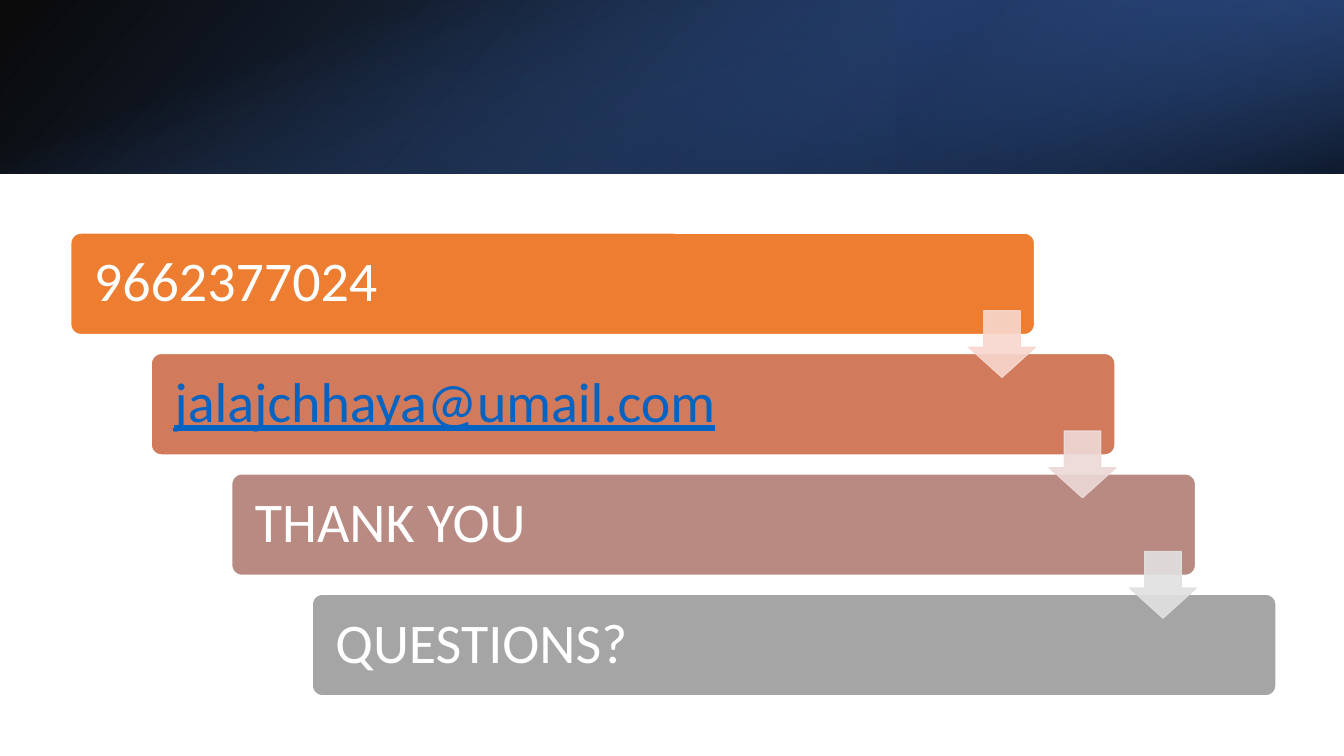
from dataclasses import dataclass

from lxml import etree
from pptx import Presentation
from pptx import util as u
from pptx.dml.color import RGBColor
from pptx.enum import shapes, text
from pptx.oxml import ns

PX = 6350  # EMU per px: 144 px to the inch
SLIDE_WIDTH, SLIDE_HEIGHT = 1920, 1080
BAND_HEIGHT = 248
STEP_X, STEP_Y = 115, 172
BOX_LEFT, BOX_TOP, BOX_WIDTH, BOX_HEIGHT = 101, 333, 1377, 145
ARROW_LEFT, ARROW_TOP, ARROW_SIZE = 1384, 444, 95
TEXT_INSET = 29

COLORS = {
    "white": "FFFFFF", "black": "000000", "link": "0563C1",
    "navy": "203864", "deep blue": "2F5597", "blue": "4472C4",
    "orange": "ED7D31", "terracotta": "D17B5C", "rose": "B98A82", "gray": "A5A5A5",
    "pale orange": "F8D7CE", "pale rose": "EDD9D7", "pale gray": "E1E1E1",
}


@dataclass
class Stop:
    percent: int
    color: str
    opacity: int = 100


@dataclass
class BandLayer:
    left: int
    top: int
    width: int
    height: int
    angle: int  # clockwise
    stops: tuple[Stop, Stop]
    rotation: int = 0
    flipped: bool = False


@dataclass
class Step:
    label: str
    fill: str
    arrow: str = ""
    is_link: bool = False


BAND_LAYERS = [
    BandLayer(0, 0, SLIDE_WIDTH, BAND_HEIGHT, 140,
              (Stop(0, "black", 96), Stop(100, "deep blue")), flipped=True),
    BandLayer(1280, 0, 640, BAND_HEIGHT, 320,
              (Stop(19, "navy", 68), Stop(100, "blue", 79)), rotation=180, flipped=True),
    BandLayer((SLIDE_WIDTH - BAND_HEIGHT) // 2, (BAND_HEIGHT - SLIDE_WIDTH) // 2,
              BAND_HEIGHT, SLIDE_WIDTH, 340,
              (Stop(23, "blue", 0), Stop(99, "black", 74)), rotation=90),
]

STEPS = [
    Step("9662377024", "orange", "pale orange"),
    Step("jalajchhaya@umail.com", "terracotta", "pale rose", is_link=True),
    Step("THANK YOU", "rose", "pale gray"),
    Step("QUESTIONS?", "gray"),
]


def rgb(name: str) -> RGBColor:
    return RGBColor.from_string(COLORS[name])


def set_opacity(color_element, percent: int) -> None:
    alpha = etree.SubElement(color_element, ns.qn("a:alpha"))
    alpha.set("val", str(percent * 1000))


def add_shape(slide, kind, left: int, top: int, width: int, height: int):
    shape = slide.shapes.add_shape(kind, left * PX, top * PX, width * PX, height * PX)
    shape.shadow.inherit = False
    return shape


def paint(shape, fill: str, line: str) -> None:
    shape.fill.solid()
    shape.fill.fore_color.rgb = rgb(fill)
    shape.line.color.rgb = rgb(line)
    shape.line.width = u.Pt(1)


def add_band_layer(slide, layer: BandLayer) -> None:
    shape = add_shape(slide, shapes.MSO_SHAPE.RECTANGLE,
                      layer.left, layer.top, layer.width, layer.height)
    shape.rotation = layer.rotation
    if layer.flipped:
        shape.element.spPr.find(ns.qn("a:xfrm")).set("flipH", "1")
    shape.line.fill.background()
    shape.fill.gradient()
    shape.fill.gradient_angle = 360 - layer.angle
    for gradient_stop, stop in zip(shape.fill.gradient_stops, layer.stops):
        gradient_stop.position = stop.percent / 100
        gradient_stop.color.rgb = rgb(stop.color)
    colors = shape.element.spPr.iter(ns.qn("a:srgbClr"))
    for color_element, stop in zip(list(colors), layer.stops):
        set_opacity(color_element, stop.opacity)


def add_step(slide, step: Step, index: int) -> None:
    box = add_shape(slide, shapes.MSO_SHAPE.ROUNDED_RECTANGLE,
                    BOX_LEFT + index * STEP_X, BOX_TOP + index * STEP_Y,
                    BOX_WIDTH, BOX_HEIGHT)
    box.adjustments[0] = 0.1
    paint(box, step.fill, "white")
    frame = box.text_frame
    frame.text = step.label
    frame.word_wrap = True
    frame.vertical_anchor = text.MSO_ANCHOR.MIDDLE
    frame.margin_left = frame.margin_right = TEXT_INSET * PX
    paragraph = frame.paragraphs[0]
    paragraph.alignment = text.PP_ALIGN.LEFT
    paragraph.line_spacing = 0.9
    font = paragraph.runs[0].font
    font.name = "Calibri"
    font.size = u.Pt(40)
    font.color.rgb = rgb("link" if step.is_link else "white")
    font.underline = step.is_link


def add_arrow(slide, color: str, index: int) -> None:
    arrow = add_shape(slide, shapes.MSO_SHAPE.DOWN_ARROW,
                      ARROW_LEFT + index * STEP_X, ARROW_TOP + index * STEP_Y,
                      ARROW_SIZE, ARROW_SIZE)
    arrow.adjustments[0] = 0.55
    arrow.adjustments[1] = 0.45
    paint(arrow, color, color)
    for color_element in list(arrow.element.spPr.iter(ns.qn("a:srgbClr"))):
        set_opacity(color_element, 90)


def main() -> None:
    presentation = Presentation()
    presentation.slide_width = SLIDE_WIDTH * PX
    presentation.slide_height = SLIDE_HEIGHT * PX
    slide = presentation.slides.add_slide(presentation.slide_layouts[6])
    slide.background.fill.solid()
    slide.background.fill.fore_color.rgb = rgb("white")

    # Header band
    for layer in BAND_LAYERS:
        add_band_layer(slide, layer)

    # Staircase of boxes, then the arrows on top
    for index, step in enumerate(STEPS):
        add_step(slide, step, index)
    for index, step in enumerate(STEPS):
        if step.arrow:
            add_arrow(slide, step.arrow, index)

    presentation.save("out.pptx")


if __name__ == "__main__":
    main()
